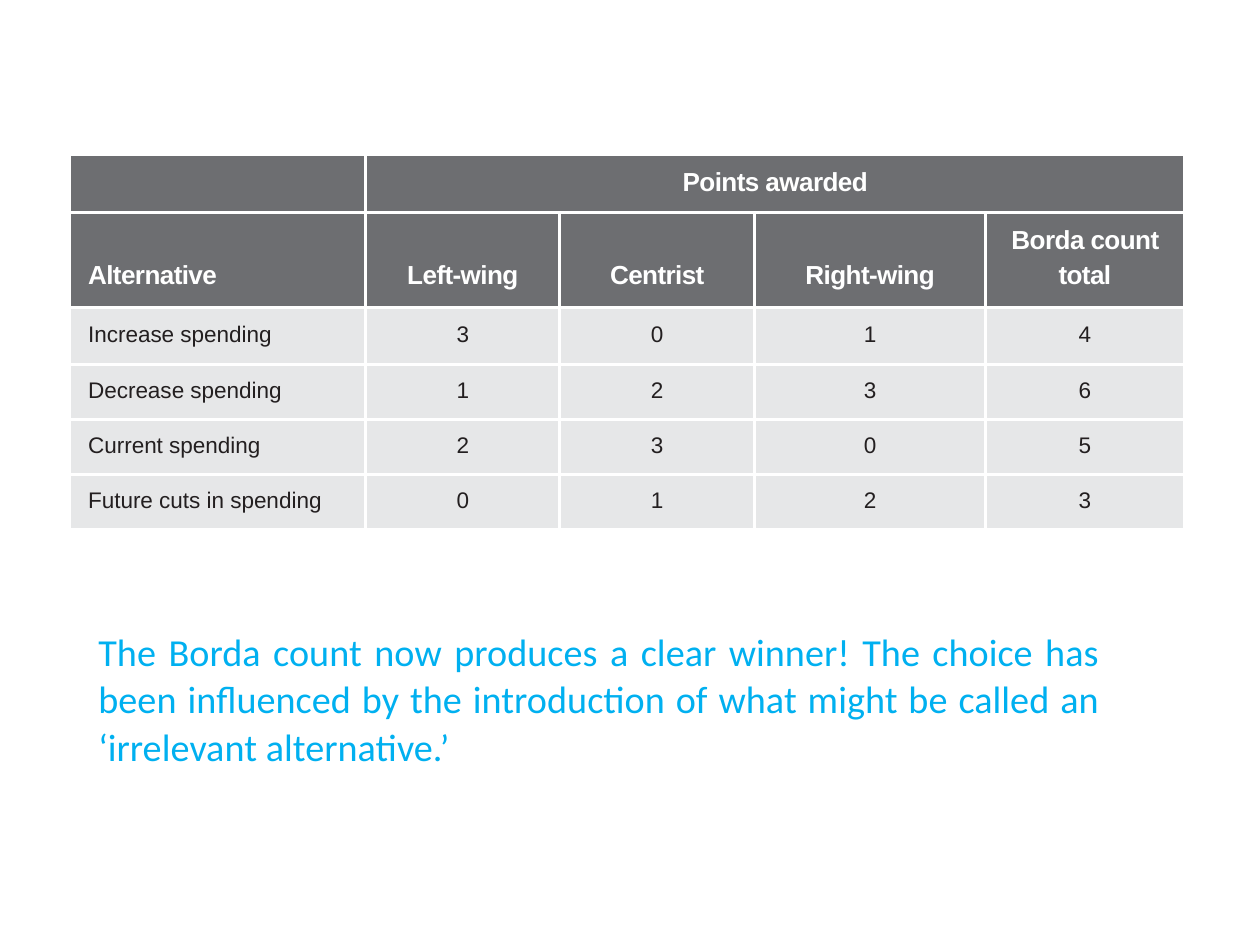
from dataclasses import dataclass

from lxml.etree import SubElement
from pptx import Presentation
from pptx.dml.color import RGBColor
from pptx.enum.text import MSO_ANCHOR as Anchor, PP_ALIGN as Align
from pptx.oxml.ns import qn
from pptx.util import Inches, Pt


@dataclass(frozen=True)
class Theme:
    header_fill: str = "6D6E71"
    body_fill: str = "E6E7E8"
    rule: str = "FFFFFF"
    header_text: str = "FFFFFF"
    body_text: str = "231F20"
    accent: str = "00B0F0"
    table_font: str = "Arial"
    note_font: str = "Calibri"
    header_size: float = 7.5
    body_size: float = 6.5
    note_size: float = 11
    rule_width: float = 1


THEME = Theme()
SLIDE_WIDTH, SLIDE_HEIGHT = Pt(363), Pt(272.5)
COLUMN_SPANS = (118.4, 77.6, 78, 92.4, 79.6)
ROW_SPANS = (23, 38, 23, 22, 22, 22)
POINTS = (
    ("", "Points awarded", "", "", ""),
    ("Alternative", "Left-wing", "Centrist", "Right-wing", "Borda count total"),
    ("Increase spending", "3", "0", "1", "4"),
    ("Decrease spending", "1", "2", "3", "6"),
    ("Current spending", "2", "3", "0", "5"),
    ("Future cuts in spending", "0", "1", "2", "3"),
)
HEADER_ROWS = 2
LAST_ROW, LAST_COLUMN = len(POINTS) - 1, len(COLUMN_SPANS) - 1
NOTE = ("The Borda count now produces a clear winner! The choice has been influenced by "
        "the introduction of what might be called an ‘irrelevant alternative.’")


def grid(count):
    """Length of a number of square grid units."""
    return Inches(count / 100)


def write(text_frame, text, *, font, size, color, bold=False, align=Align.LEFT,
          line_spacing=1.0, tracking=0.0):
    paragraph = text_frame.paragraphs[0]
    paragraph.alignment = align
    paragraph.line_spacing = line_spacing
    if not text:
        # An empty cell takes its height from the end-of-paragraph size.
        SubElement(paragraph._p, qn("a:endParaRPr"), sz=str(int(size * 100)))
        return
    run = paragraph.add_run()
    run.text = text
    run.font.name = font
    run.font.size = Pt(size)
    run.font.bold = bold
    run.font.color.rgb = RGBColor.from_string(color)
    if tracking:
        run.font._element.set("spc", str(round(tracking * 100)))


def set_inner_borders(cell, row, column):
    has_neighbour = {"lnL": column > 0, "lnR": column < LAST_COLUMN,
                     "lnT": row > 0, "lnB": row < LAST_ROW}
    properties = cell._tc.get_or_add_tcPr()
    for side, is_inner in has_neighbour.items():
        if is_inner:
            line = SubElement(properties, qn(f"a:{side}"), w=str(Pt(THEME.rule_width)))
            SubElement(SubElement(line, qn("a:solidFill")), qn("a:srgbClr"), val=THEME.rule)


def format_cell(cell, text, row, column):
    is_header = row < HEADER_ROWS
    is_label = column == 0
    is_column_title = row == HEADER_ROWS - 1
    set_inner_borders(cell, row, column)
    cell.fill.solid()
    cell.fill.fore_color.rgb = RGBColor.from_string(
        THEME.header_fill if is_header else THEME.body_fill)
    cell.margin_left = grid(7.3 if is_label else 4)
    cell.margin_right = 0 if is_label else grid(4)
    cell.margin_top = 0
    cell.margin_bottom = grid(7 if is_column_title else 1.5)
    cell.vertical_anchor = Anchor.BOTTOM if is_column_title else Anchor.MIDDLE
    write(cell.text_frame, text, font=THEME.table_font, bold=is_header,
          size=THEME.header_size if is_header else THEME.body_size,
          color=THEME.header_text if is_header else THEME.body_text,
          align=Align.LEFT if is_label else Align.CENTER,
          line_spacing=1.2 if is_column_title and column == LAST_COLUMN else 1.0,
          tracking=-0.2 if is_header else 0)


def add_points_table(slide, left, top):
    shape = slide.shapes.add_table(
        len(POINTS), len(COLUMN_SPANS), grid(left), grid(top),
        grid(sum(COLUMN_SPANS)), grid(sum(ROW_SPANS)))
    table = shape.table
    for column, span in zip(table.columns, COLUMN_SPANS):
        column.width = grid(span)
    for row, span in zip(table.rows, ROW_SPANS):
        row.height = grid(span)
    table.cell(0, 1).merge(table.cell(0, LAST_COLUMN))
    for row, texts in enumerate(POINTS):
        for column, text in enumerate(texts):
            format_cell(table.cell(row, column), text, row, column)


def add_note(slide, left, top, width, height):
    box = slide.shapes.add_textbox(grid(left), grid(top), grid(width), grid(height))
    frame = box.text_frame
    frame.word_wrap = True
    frame.margin_left = grid(1)
    frame.margin_right = frame.margin_bottom = 0
    frame.margin_top = grid(1)
    write(frame, NOTE, font=THEME.note_font, size=THEME.note_size,
          color=THEME.accent, align=Align.JUSTIFY, line_spacing=1.03)


def main():
    presentation = Presentation()
    presentation.slide_width = SLIDE_WIDTH
    presentation.slide_height = SLIDE_HEIGHT
    blank_layout = presentation.slide_layouts[6]
    slide = presentation.slides.add_slide(blank_layout)
    add_points_table(slide, left=28, top=62)
    add_note(slide, left=38.4, top=250, width=402, height=59)
    presentation.save("out.pptx")


if __name__ == "__main__":
    main()
